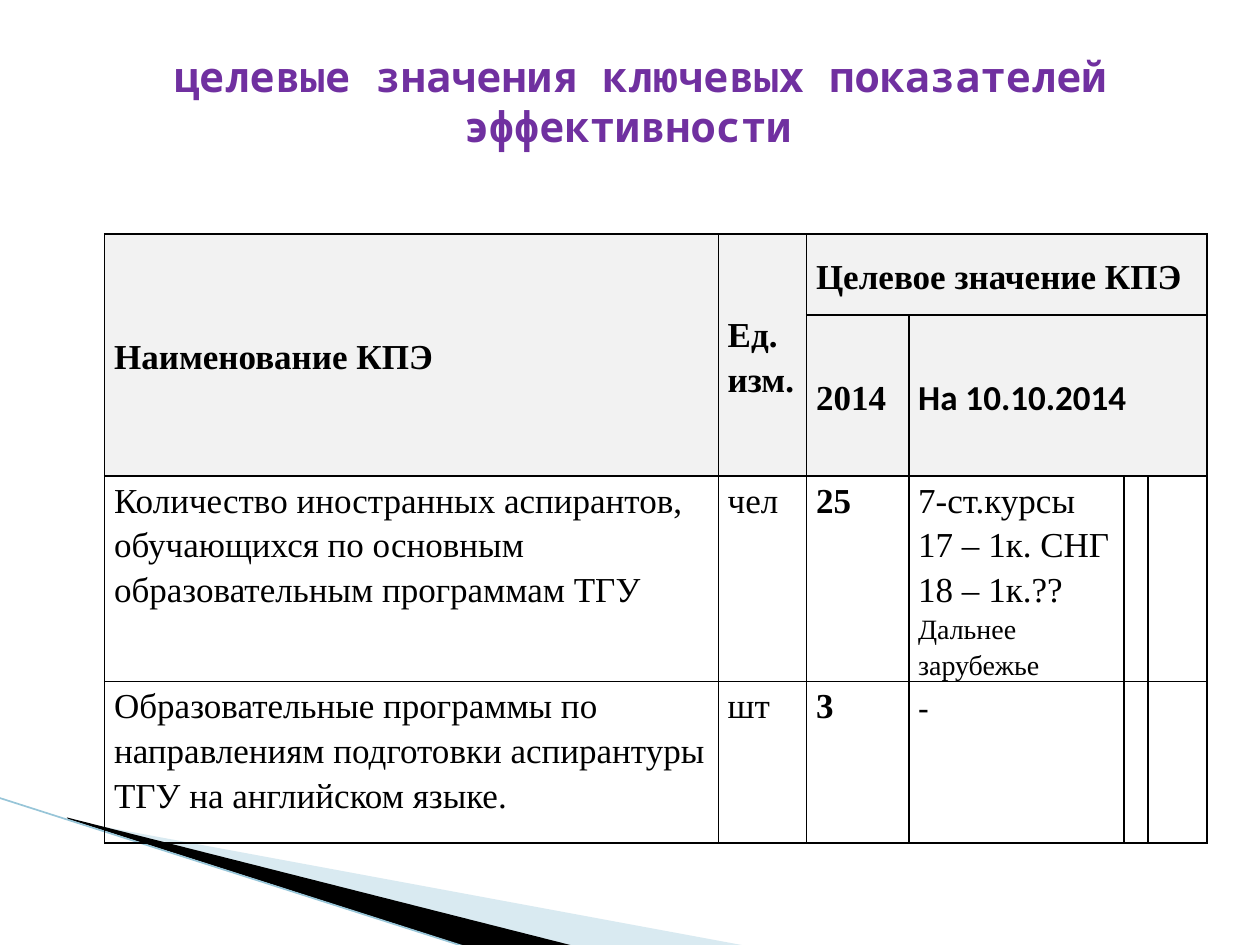
from lxml import etree
from pptx import Presentation
from pptx.dml.color import RGBColor
from pptx.enum.shapes import MSO_CONNECTOR
from pptx.enum.text import MSO_ANCHOR, PP_ALIGN
from pptx.oxml import parse_xml
from pptx.oxml.ns import nsdecls, qn
from pptx.util import Cm, Pt

COLORS = {"title": "7030A0", "text": "000000", "header": "F2F2F2",
          "border": "000000", "pale": "A0CBDC", "dark": "000000", "edge": "97C5D8"}
SERIF, SANS, MONO = "Times New Roman", "Calibri", "Noto Sans Mono"
COLUMNS = [12.37, 1.78, 2.06, 4.34, 0.46, 1.19]
ROWS = [1.63, 3.25, 3.25, 3.25]
# (row, column): (text, font, bold)
HEADERS = {
    (0, 0): ("Наименование КПЭ", SERIF, True),
    (0, 1): ("Ед. изм.", SERIF, True),
    (0, 2): ("Целевое значение КПЭ", SERIF, True),
    (1, 2): ("2014", SERIF, True),
    (1, 3): ("На 10.10.2014", SANS, True),
}
BODY = {
    (2, 0): ("Количество иностранных аспирантов, обучающихся по основным "
             "образовательным программам ТГУ", SERIF, False),
    (2, 1): ("чел", SERIF, False),
    (2, 2): ("25", SERIF, True),
    (2, 3): ("7-ст.курсы\n17 – 1к. СНГ\n18 – 1к.?? ", SERIF, False),
    (3, 0): ("Образовательные программы по направлениям подготовки "
             "аспирантуры ТГУ на английском языке.", SERIF, False),
    (3, 1): ("шт", SERIF, False),
    (3, 2): ("3", SERIF, True),
    (3, 3): ("-", SANS, False),
}
MERGES = [((0, 0), (1, 0)), ((0, 1), (1, 1)), ((0, 2), (0, 5)), ((1, 3), (1, 5))]


def rgb(name):
    return RGBColor.from_string(COLORS[name])


def set_font(font, name, size, bold, color="text"):
    font.name, font.size, font.bold = name, Pt(size), bold
    font.color.rgb = rgb(color)


def add_wedge(s, points, color, alpha=100):
    """Draw a filled polygon; points are in centimetres."""
    start, *rest = [(Cm(x), Cm(y)) for x, y in points]
    builder = s.shapes.build_freeform(*start)
    builder.add_line_segments(rest, close=True)
    sp = builder.convert_to_shape()
    sp.shadow.inherit = False
    sp.fill.solid()
    sp.fill.fore_color.rgb = rgb(color)
    sp.line.fill.background()
    if alpha < 100:
        clr = sp.fill._xPr.find(qn("a:solidFill"))[0]
        etree.SubElement(clr, qn("a:alpha")).set("val", str(alpha * 1000))


def add_edge(s, x1, y1, x2, y2):
    line = s.shapes.add_connector(MSO_CONNECTOR.STRAIGHT, Cm(x1), Cm(y1), Cm(x2), Cm(y2))
    line.line.color.rgb = rgb("edge")
    line.line.width = Pt(0.95)
    etree.SubElement(line._element.spPr, qn("a:effectLst"))


def add_title(s, text):
    tb = s.shapes.add_textbox(Cm(0.84), Cm(0.74), Cm(24.13), Cm(2.59))
    tf = tb.text_frame
    tf.word_wrap = True
    tf.vertical_anchor = MSO_ANCHOR.MIDDLE
    p = tf.paragraphs[0]
    p.text = text
    p.alignment = PP_ALIGN.CENTER
    set_font(p.font, MONO, 24, True, "title")


def style_cell(cell, header):
    cell.margin_left = cell.margin_right = Cm(0.19)
    cell.margin_top = cell.margin_bottom = 0
    tc_pr = cell._tc.get_or_add_tcPr()
    for side in ("lnL", "lnR", "lnT", "lnB"):
        tc_pr.append(parse_xml(
            f'<a:{side} {nsdecls("a")} w="12700"><a:solidFill>'
            f'<a:srgbClr val="{COLORS["border"]}"/></a:solidFill></a:{side}>'))
    if header:
        cell.vertical_anchor = MSO_ANCHOR.MIDDLE
        cell.fill.solid()
        cell.fill.fore_color.rgb = rgb("header")
    else:
        cell.fill.background()


def fill_cell(cell, text, font, bold, space_after=0):
    cell.text = text
    for p in cell.text_frame.paragraphs:
        p.line_spacing = 1.15
        p.space_after = Pt(space_after)
        set_font(p.font, font, 20, bold)


def add_kpi_table(s):
    frame = s.shapes.add_table(len(ROWS), len(COLUMNS), Cm(2.11), Cm(4.72),
                               Cm(sum(COLUMNS)), Cm(sum(ROWS)))
    table = frame.table
    table.first_row = table.horz_banding = False
    for column, width in zip(table.columns, COLUMNS):
        column.width = Cm(width)
    for i, (row, height) in enumerate(zip(table.rows, ROWS)):
        row.height = Cm(height)
        for cell in row.cells:
            style_cell(cell, header=i < 2)
    for first, last in MERGES:
        table.cell(*first).merge(table.cell(*last))
    for (row, col), content in (HEADERS | BODY).items():
        fill_cell(table.cell(row, col), *content, space_after=6 if row == 3 else 0)
    r = table.cell(2, 3).text_frame.paragraphs[-1].add_run()
    r.text = "Дальнее зарубежье"
    r.font.size = Pt(16)


def main():
    prs = Presentation()
    prs.slide_width, prs.slide_height = Cm(25.4), Cm(19.05)
    s = prs.slides.add_slide(prs.slide_layouts[6])
    add_wedge(s, [(1.4, 16.54), (15.11, 19.08), (11.58, 19.08), (1.4, 16.51)], "pale", 40)
    add_wedge(s, [(1.35, 16.48), (11.61, 19.08), (9.45, 19.1), (1.37, 16.51)], "dark")
    add_edge(s, -0.03, 16.08, 9.42, 19.1)
    add_kpi_table(s)
    add_title(s, "целевые значения ключевых показателей эффективности ")
    prs.save("out.pptx")


if __name__ == "__main__":
    main()
